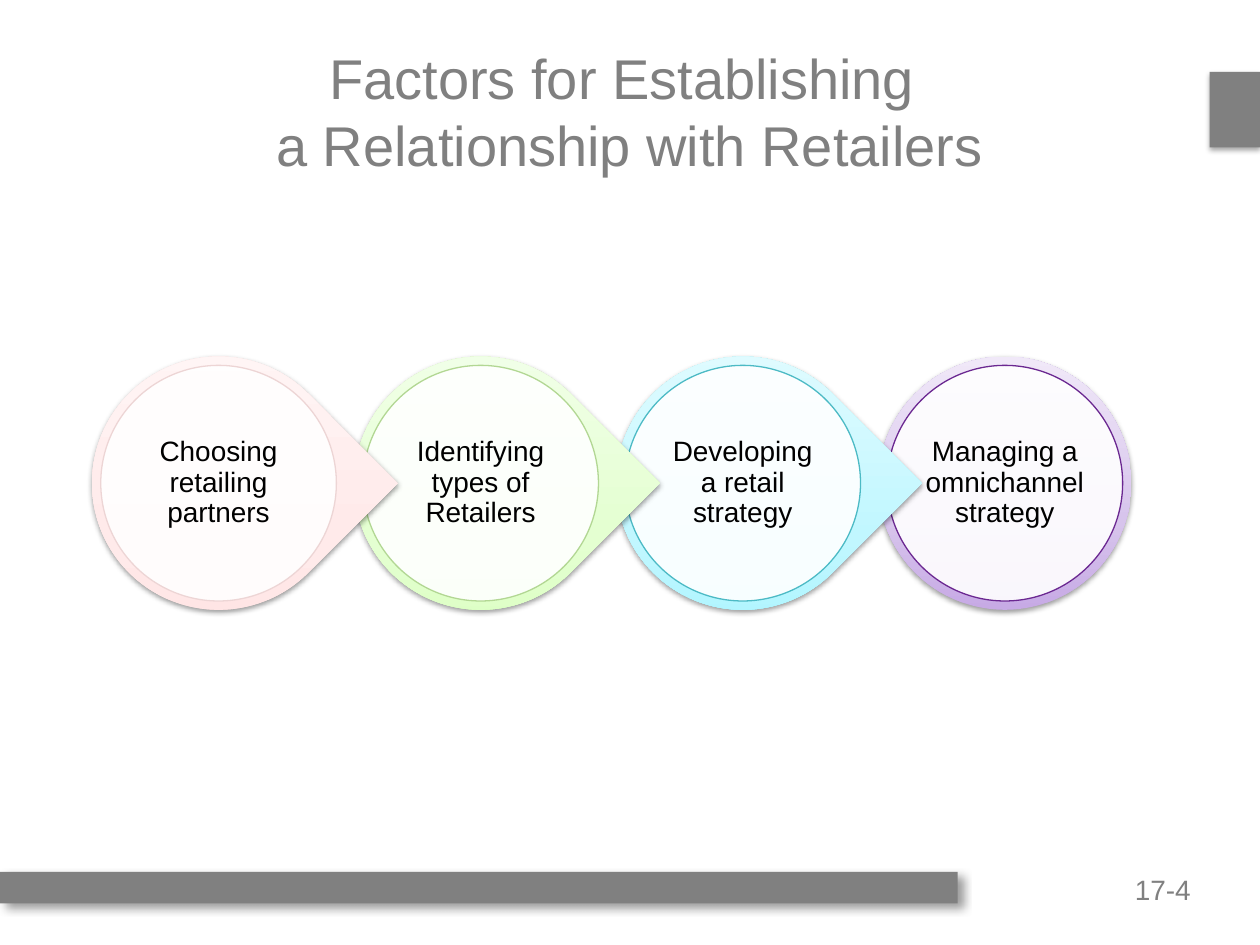
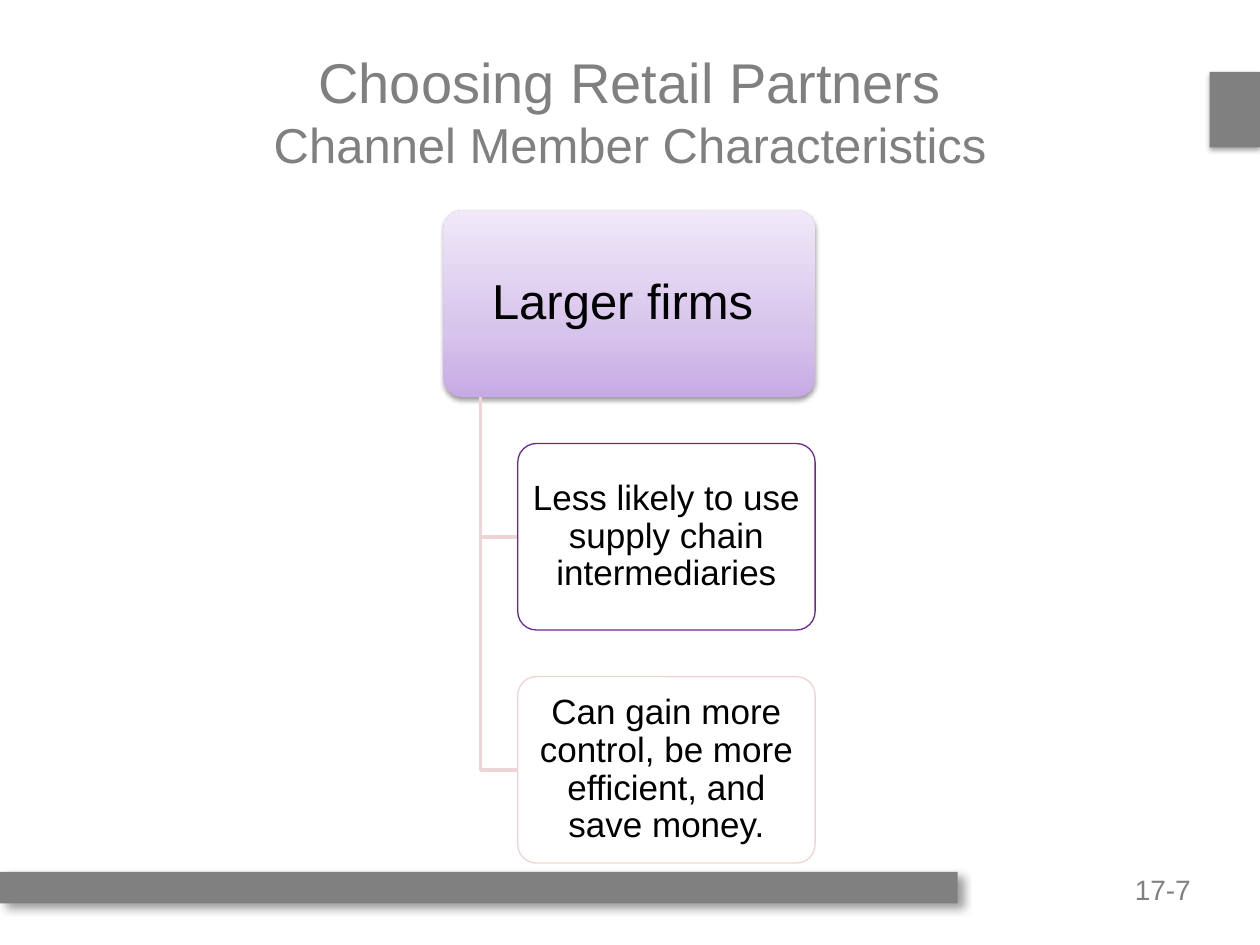
from pptx import Presentation
from pptx.dml.color import RGBColor
from pptx.enum.shapes import MSO_SHAPE as SHAPE
from pptx.enum.text import MSO_ANCHOR as ANCHOR, PP_ALIGN as ALIGN
from pptx.oxml.ns import qn
from pptx.util import Inches, Pt
from lxml.etree import SubElement

FONT = "Arial"
COLORS = {
    "white": "FFFFFF", "black": "000000", "gray": "808080",
    "pink": "EDD5D5", "green": "B2D793", "teal": "4CBAC5", "purple": "6B2891",
}
GRADIENTS = {
    "pink": ("FFE2E2", "FFEAEA", "FFF7F7"),
    "green": ("D9FFBF", "E4FFD1", "F4FFED"),
    "teal": ("A7F4FF", "C1F7FF", "E7FCFF"),
    "purple": ("C7AAE5", "D7C4EC", "F0E8F8"),
}
STOPS = (0, 35, 100)
SOFT_SHADOW = (38, 3.1, 1.6, 90)
TAB_SHADOW = (35, 3.1, 1.8, 90)
BAND_SHADOW = (38, 5, 4, 45)


def rgb(name):
    return RGBColor.from_string(COLORS[name])


def add_color(parent, value, alpha=100):
    clr = SubElement(parent, qn("a:srgbClr"), val=value)
    if alpha < 100:
        SubElement(clr, qn("a:alpha"), val=str(alpha * 1000))


def add_shape(slide, kind, box, shadow=None):
    sp = slide.shapes.add_shape(kind, *map(Inches, box))
    sp.line.fill.background()
    sp.shadow.inherit = False
    if shadow:
        alpha, blur, dist, angle = shadow
        effects = sp._element.spPr.find(qn("a:effectLst"))
        outer = SubElement(effects, qn("a:outerShdw"), blurRad=str(Pt(blur)),
                           dist=str(Pt(dist)), dir=str(angle * 60000),
                           algn="ctr", rotWithShape="0")
        add_color(outer, COLORS["black"], alpha)
    return sp


def fill_gradient(sp, name):
    sp.fill.gradient()
    sp.fill.gradient_angle = 90
    grad = sp._element.spPr.find(qn("a:gradFill"))
    grad.set("rotWithShape", "0")
    stops = grad.find(qn("a:gsLst"))
    for old in list(stops):
        stops.remove(old)
    for pos, value in zip(STOPS, GRADIENTS[name]):
        add_color(SubElement(stops, qn("a:gs"), pos=str(pos * 1000)), value)


def fill_outlined(sp, name):
    sp.fill.solid()
    sp.fill.fore_color.rgb = rgb("white")
    clr = sp._element.spPr.find(qn("a:solidFill"))[0]
    SubElement(clr, qn("a:alpha"), val="90000")
    sp.line.color.rgb = rgb(name)
    sp.line.width = Pt(0.75)


def set_text(sp, text, size, color="black", align=ALIGN.CENTER,
             anchor=ANCHOR.MIDDLE, margins=(0.1, 0.05), spacing=None):
    tf = sp.text_frame
    tf.word_wrap = True
    tf.vertical_anchor = anchor
    tf.margin_left = tf.margin_right = Inches(margins[0])
    tf.margin_top = tf.margin_bottom = Inches(margins[1])
    p = tf.paragraphs[0]
    p.text = text
    p.alignment = align
    p.line_spacing = spacing
    p.font.name = FONT
    p.font.size = Pt(size)
    p.font.color.rgb = rgb(color)
    for r in p.runs:
        r.font.name, r.font.size = FONT, Pt(size)
        r.font.color.rgb = rgb(color)
    return p


def add_frame(prs, title, number, subtitle_size=None):
    slide = prs.slides.add_slide(prs.slide_layouts[6])
    slide.background.fill.solid()
    slide.background.fill.fore_color.rgb = rgb("white")

    page = slide.shapes.add_textbox(*map(Inches, (7.5, 6.92, 1.95, 0.25)))
    set_text(page, number, 16, "gray", ALIGN.RIGHT, ANCHOR.TOP, (0, 0), 1.02)
    for box, shadow in (((9.6, 0.57, 0.4, 0.6), TAB_SHADOW),
                        ((0, 6.92, 7.6, 0.25), BAND_SHADOW)):
        bar = add_shape(slide, SHAPE.RECTANGLE, box, shadow)
        bar.fill.solid()
        bar.fill.fore_color.rgb = rgb("gray")

    heading = slide.shapes.add_textbox(*map(Inches, (0.6, 0.25, 8.8, 1.25)))
    p = set_text(heading, title, 32, "gray")
    if subtitle_size:
        p.runs[-1].font.size = Pt(subtitle_size)
    return slide


def add_drop_chain(slide, box, factors):
    left, top, width, size = box
    pitch = (width - size) / (len(factors) - 1)
    rim = 0.07
    disc = size - 2 * rim
    for i, (text, color) in reversed(list(enumerate(factors))):
        x = left + i * pitch
        is_last = i == len(factors) - 1
        kind = SHAPE.OVAL if is_last else SHAPE.TEAR
        drop = add_shape(slide, kind, (x, top, size, size), SOFT_SHADOW)
        fill_gradient(drop, color)
        if not is_last:
            drop.rotation = 45
        face = add_shape(slide, SHAPE.OVAL, (x + rim, top + rim, disc, disc))
        fill_outlined(face, color)
        set_text(face, text, 16, margins=(0.02, 0.02), spacing=0.9)


def add_elbow(slide, x, top, right, bottom):
    builder = slide.shapes.build_freeform(Inches(x), Inches(top))
    builder.add_line_segments(
        [(Inches(x), Inches(bottom)), (Inches(right), Inches(bottom))], close=False)
    sp = builder.convert_to_shape()
    sp.fill.background()
    sp.line.color.rgb = rgb("pink")
    sp.line.width = Pt(2)
    sp.shadow.inherit = False


def add_hierarchy(slide, box, root_text, children):
    left, top, width, height = box
    pitch = height * 1.25
    stem, child_left = left + width * 0.1, left + width * 0.2
    root = add_shape(slide, SHAPE.ROUNDED_RECTANGLE, box, SOFT_SHADOW)
    root.adjustments[0] = 0.1
    fill_gradient(root, "purple")
    set_text(root, root_text, 28, margins=(0.06, 0.04), spacing=0.9)
    for i, (text, color) in enumerate(children, 1):
        y = top + i * pitch
        add_elbow(slide, stem, top + height, child_left, y + height / 2)
        child = add_shape(slide, SHAPE.ROUNDED_RECTANGLE,
                          (child_left, y, width * 0.8, height))
        child.adjustments[0] = 0.1
        fill_outlined(child, color)
        set_text(child, text, 20, margins=(0.04, 0.03), spacing=0.9)


def build_factors(prs):
    slide = add_frame(
        prs, "Factors for Establishing \va Relationship with Retailers", "17-4")
    add_drop_chain(slide, (0.73, 2.83, 8.25, 2.01), [
        ("Choosing retailing partners", "pink"),
        ("Identifying types of Retailers", "green"),
        ("Developing a retail strategy", "teal"),
        ("Managing a omnichannel strategy", "purple"),
    ])


def build_partners(prs):
    slide = add_frame(
        prs, "Choosing Retail Partners\vChannel Member Characteristics", "17-7", 28)
    add_hierarchy(slide, (3.52, 1.67, 2.95, 1.48), "Larger firms ", [
        ("Less likely to use supply chain intermediaries", "purple"),
        ("Can gain more control, be more efficient, and save money.", "pink"),
    ])


def main():
    prs = Presentation()
    prs.slide_width, prs.slide_height = Inches(10), Inches(7.5)
    build_factors(prs)
    build_partners(prs)
    prs.save("out.pptx")


if __name__ == "__main__":
    main()
